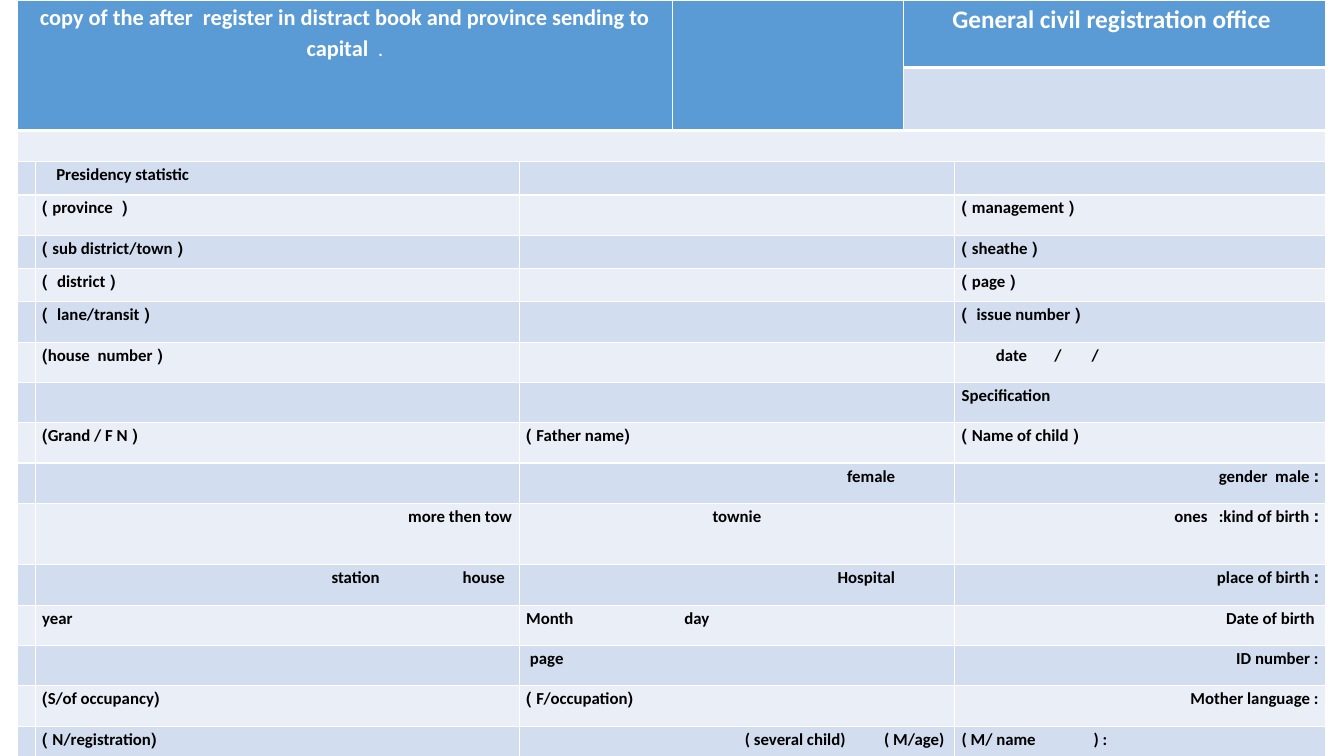
from lxml import etree
from pptx import Presentation
from pptx.dml.color import RGBColor
from pptx.enum.text import PP_ALIGN
from pptx.oxml.ns import qn
from pptx.util import Inches, Pt

LEFT, CENTER, RIGHT = PP_ALIGN.LEFT, PP_ALIGN.CENTER, PP_ALIGN.RIGHT
FONT = "Calibri"
COLORS = {"header": "5B9BD5", "dark": "D2DEEF", "light": "EAEFF7",
          "white": "FFFFFF", "black": "000000"}
COLUMNS = [0.17, 4.8, 1.52, 2.29, 0.51, 3.68]
ROWS = [0.67, 0.62, 0.31, 0.33, 0.4, 0.33, 0.33] + [0.4] * 5 + [0.61] + [0.4] * 5
FIRST_FORM_ROW = 3

# Paragraph kinds: alignment, right-to-left, right cell margin
KINDS = {
    "rtl left": (LEFT, True, 0.07),
    "rtl right": (RIGHT, True, 0.07),
    "rtl center": (CENTER, True, 0.07),
    "rtl inset": (RIGHT, True, 0.59),
    "left": (LEFT, False, 0.07),
    "right": (RIGHT, False, 0.07),
}

# Form fields by row: {column: (kind, text, tab stops)}
FIELDS = [
    {1: ("left", "\tPresidency statistic", [0.14])},
    {1: ("rtl left", "(  province )", []), 5: ("rtl left", "( management )", [])},
    {1: ("rtl left", "( sub district/town )", []), 5: ("rtl left", "( sheathe )", [])},
    {1: ("rtl left", "( district  )", []), 5: ("rtl left", "( page )", [])},
    {1: ("rtl left", "( lane/transit  )", []), 5: ("rtl left", "( issue number  )", [])},
    {1: ("rtl left", "( house  number)", []),
     5: ("left", "\tdate\t/\t/", [0.34, 0.92, 1.29])},
    {5: ("left", "Specification", [])},
    {1: ("rtl left", "( Grand / F N)", []), 2: ("rtl left", "(Father name )", []),
     5: ("rtl left", "( Name of child )", [])},
    {2: ("rtl inset", "female", []), 5: ("rtl right", ": gender  male", [])},
    {1: ("rtl right", "more then tow", []), 2: ("rtl center", "townie", []),
     5: ("rtl right", ": ones   :kind of birth", [])},
    {1: ("left", "\tstation\thouse", [2.87, 4.17]), 2: ("rtl inset", "Hospital", []),
     5: ("rtl right", ": place of birth", [])},
    {1: ("left", "year", []), 2: ("left", "Month\tday", [1.57]),
     5: ("right", "Date of birth ", [])},
    {2: ("left", " page", []), 5: ("right", "ID number :", [])},
    {1: ("rtl left", "(S/of occupancy)", []), 2: ("rtl left", "(F/occupation )", []),
     5: ("right", "Mother language :", [])},
    {1: ("rtl left", "(N/registration )", []),
     2: ("left", "\t( several child)\t( M/age)", [2.17, 3.55]),
     5: ("left", "( M/ name\t) :", [1.31])},
]


def add_span(para, text, size, color):
    span = para.add_run()
    span.text = text
    span.font.name = FONT
    span.font.size = Pt(size)
    span.font.bold = True
    span.font.color.rgb = RGBColor.from_string(COLORS[color])


def style_cell(cell, fill, top_width, bottom_width):
    cell.margin_left = cell.margin_right = Inches(0.07)
    cell.margin_top = cell.margin_bottom = 0
    cell.fill.solid()
    cell.fill.fore_color.rgb = RGBColor.from_string(COLORS[fill])
    properties = cell._tc.get_or_add_tcPr()
    widths = {"a:lnL": 1, "a:lnR": 1, "a:lnT": top_width, "a:lnB": bottom_width}
    for position, (side, width) in enumerate(widths.items()):
        border = etree.Element(qn(side), w=str(Pt(width)))
        solid = etree.SubElement(border, qn("a:solidFill"))
        etree.SubElement(solid, qn("a:srgbClr"), val=COLORS["white"])
        properties.insert(position, border)


deck = Presentation()
deck.slide_width, deck.slide_height = Inches(13.33), Inches(7.5)
page = deck.slides.add_slide(deck.slide_layouts[6])

# Table grid
form = page.shapes.add_table(len(ROWS), len(COLUMNS), Inches(0.17), 0,
                             Inches(sum(COLUMNS)), Inches(sum(ROWS))).table
for column, width in zip(form.columns, COLUMNS):
    column.width = Inches(width)
for row, height in zip(form.rows, ROWS):
    row.height = Inches(height)

# Fills and borders, with thicker lines around the header
for row_index in range(len(ROWS)):
    band = "dark" if row_index % 2 else "light"
    for column_index in range(len(COLUMNS)):
        in_header = row_index == 0 or (row_index == 1 and column_index < 4)
        cell = form.cell(row_index, column_index)
        style_cell(cell, "header" if in_header else band,
                   3 if row_index in (1, 2) else 1, 3 if row_index < 2 else 1)
        cell.text_frame.paragraphs[0]._p.get_or_add_endParaRPr().set("sz", "1200")

# Merged cells
form.cell(0, 0).merge(form.cell(1, 2))
form.cell(0, 3).merge(form.cell(1, 3))
for row_index in (0, 1):
    form.cell(row_index, 4).merge(form.cell(row_index, 5))
form.cell(2, 0).merge(form.cell(2, 5))
for row_index in range(FIRST_FORM_ROW, len(ROWS)):
    form.cell(row_index, 2).merge(form.cell(row_index, 4))

# Header texts
copy_para = form.cell(0, 0).text_frame.paragraphs[0]
copy_para.space_after = Pt(10)
add_span(copy_para, "copy of the after  register in distract book and province "
         "sending to capital  ", 16, "white")
add_span(copy_para, ".", 12, "white")
office_para = form.cell(0, 4).text_frame.paragraphs[0]
add_span(office_para, "General civil registration office ", 18, "white")
for para in (copy_para, office_para):
    para.alignment = CENTER
    para.line_spacing = 1.15

# Form texts
for row_index, fields in enumerate(FIELDS, FIRST_FORM_ROW):
    for column_index, (kind, text, stops) in fields.items():
        alignment, right_to_left, margin = KINDS[kind]
        cell = form.cell(row_index, column_index)
        cell.margin_right = Inches(margin)
        para = cell.text_frame.paragraphs[0]
        para.alignment = alignment
        para.line_spacing = 1.15
        properties = para._p.get_or_add_pPr()
        if right_to_left:
            properties.set("rtl", "1")
        if stops:
            tab_list = etree.SubElement(properties, qn("a:tabLst"))
            for stop in stops:
                etree.SubElement(tab_list, qn("a:tab"), pos=str(Inches(stop)), algn="l")
        add_span(para, text, 12, "black")

deck.save("out.pptx")
